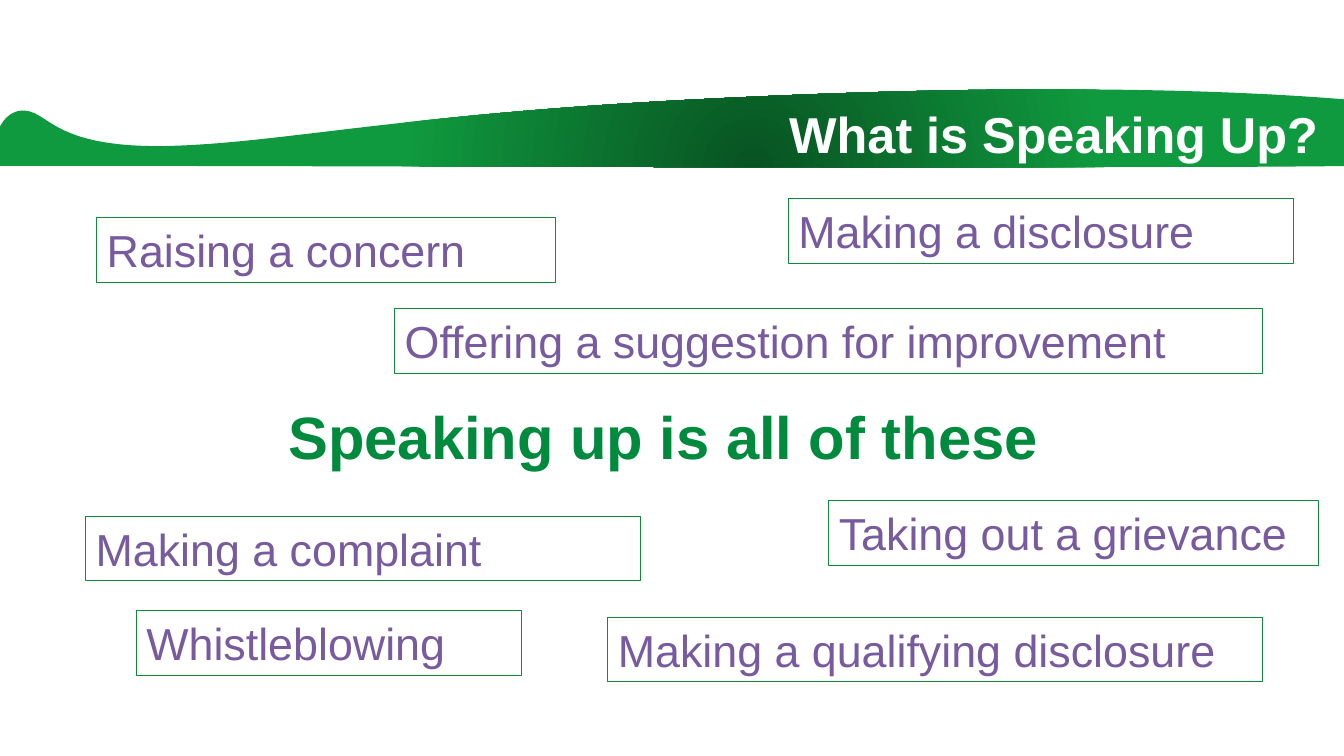
import pptx
import pptx.dml.color
import pptx.enum.shapes
import pptx.enum.text
import pptx.oxml
import pptx.util

Cm = pptx.util.Cm
Pt = pptx.util.Pt
RGBColor = pptx.dml.color.RGBColor

WHITE = RGBColor(0xFF, 0xFF, 0xFF)
GREEN = RGBColor(0x00, 0x8A, 0x3E)
BORDER_GREEN = RGBColor(0x0E, 0x8A, 0x38)
BAND_GREEN = RGBColor(0x10, 0x9A, 0x3F)
BAND_DARK = RGBColor(0x08, 0x53, 0x22)
PURPLE = RGBColor(0x78, 0x5B, 0x9E)

EXAMPLE_HEIGHT = 1.63
DRAWING = 'xmlns:a="http://schemas.openxmlformats.org/drawingml/2006/main"'

BAND_FRAME = (-0.25, 2.24, 38.48, 1.98)
BAND_START = (34.82, 2.59)
BAND_CURVES = [
    ((32.08, 2.31), (26.87, 2.06), (18.49, 2.46)),
    ((10.13, 2.84), (7.19, 3.61), (4.19, 3.68)),
    ((1.19, 3.73), (1.24, 2.72), (0.51, 2.79)),
    ((-0.25, 2.9), (-0.18, 4.22), (-0.25, 4.19)),
    ((-0.41, 4.14), (28.83, 4.29), (34.85, 4.17)),
    ((40.87, 4.04), (37.54, 2.87), BAND_START),
]

EXAMPLES = [
    ("Making a complaint", 2.16, 13.01, 13.98),
    ("Taking out a grievance", 20.89, 12.61, 12.34),
    ("Whistleblowing", 3.44, 15.39, 9.7),
    ("Offering a suggestion for improvement", 9.95, 7.78, 21.87),
    ("Raising a concern", 2.44, 5.48, 11.56),
    ("Making a qualifying disclosure", 15.32, 15.55, 16.51),
    ("Making a disclosure", 19.87, 5.0, 12.73),
]


def add_curved_shape(slide, frame, start, curves):
    """Add a closed outline of Bezier curves positioned in a frame."""
    builder = slide.shapes.build_freeform(Cm(start[0]), Cm(start[1]))
    builder.add_line_segments([(Cm(x), Cm(y)) for *_, (x, y) in curves], close=True)
    shape = builder.convert_to_shape()
    shape.left, shape.top, shape.width, shape.height = map(Cm, frame)

    def point_xml(x, y):
        return f'<a:pt x="{Cm(x) - shape.left}" y="{Cm(y) - shape.top}"/>'

    curve_xml = "".join(
        "<a:cubicBezTo>" + "".join(point_xml(*point) for point in curve) + "</a:cubicBezTo>"
        for curve in curves
    )
    outline = pptx.oxml.parse_xml(
        f'<a:path {DRAWING} w="{shape.width}" h="{shape.height}">'
        f"<a:moveTo>{point_xml(*start)}</a:moveTo>{curve_xml}<a:close/></a:path>"
    )
    outlines = shape._element.spPr.find(".//" + pptx.oxml.ns.qn("a:pathLst"))
    outlines.replace(outlines[0], outline)
    return shape


def fill_radial(shape, stops, left, top):
    """Fill a shape with a circular gradient centred at the given percentages."""
    stop_xml = "".join(
        f'<a:gs pos="{position * 1000}"><a:srgbClr val="{color}"/></a:gs>'
        for position, color in stops
    )
    gradient = pptx.oxml.parse_xml(
        f'<a:gradFill {DRAWING} rotWithShape="1"><a:gsLst>{stop_xml}</a:gsLst>'
        f'<a:path path="circle"><a:fillToRect l="{left * 1000}" t="{top * 1000}" '
        f'r="{(100 - left) * 1000}" b="{(100 - top) * 1000}"/></a:path></a:gradFill>'
    )
    shape.fill.background()
    properties = shape._element.spPr
    properties.replace(properties.find(pptx.oxml.ns.qn("a:noFill")), gradient)


def add_band(slide):
    """Draw the wavy green band behind the title."""
    band = add_curved_shape(slide, BAND_FRAME, BAND_START, BAND_CURVES)
    band.shadow.inherit = False
    band.line.fill.background()
    fill_radial(band, [(0, BAND_DARK), (46, BAND_GREEN), (100, BAND_GREEN)], 50, 130)


def write_text(shape, text, *, size, color, bold=False,
               align=pptx.enum.text.PP_ALIGN.LEFT, insets=(0.25, 0.13, 0.25, 0.13)):
    """Write one formatted line of text in a shape."""
    frame = shape.text_frame
    frame.word_wrap = True
    frame.vertical_anchor = pptx.enum.text.MSO_ANCHOR.MIDDLE
    frame.margin_left, frame.margin_top, frame.margin_right, frame.margin_bottom = map(Cm, insets)
    paragraph = frame.paragraphs[0]
    paragraph.alignment = align
    run = paragraph.add_run()
    run.text = text
    run.font.name = "Arial"
    run.font.size = Pt(size)
    run.font.bold = bold
    run.font.color.rgb = color


def add_heading(slide, text, left, top, width, height, **text_format):
    """Add a bold text box."""
    heading = slide.shapes.add_textbox(Cm(left), Cm(top), Cm(width), Cm(height))
    write_text(heading, text, bold=True, **text_format)


def add_example(slide, text, left, top, width):
    """Add an outlined box naming one way of speaking up."""
    example = slide.shapes.add_shape(
        pptx.enum.shapes.MSO_SHAPE.RECTANGLE,
        Cm(left), Cm(top), Cm(width), Cm(EXAMPLE_HEIGHT),
    )
    example.shadow.inherit = False
    example.fill.background()
    example.line.color.rgb = BORDER_GREEN
    example.line.width = Pt(0.75)
    write_text(example, text, size=32, color=PURPLE)


def main():
    """Build and save the slide."""
    presentation = pptx.Presentation()
    presentation.slide_width = Cm(33.87)
    presentation.slide_height = Cm(19.05)
    slide = presentation.slides.add_slide(presentation.slide_layouts[6])
    add_band(slide)
    add_heading(slide, "What is Speaking Up?", 18.9, 1.7, 23.88, 3.3,
                size=36, color=WHITE, insets=(0.99, 0.41, 0.99, 0.41))
    add_heading(slide, "Speaking up is all of these", 1.27, 3.76, 31.34, 13.61,
                size=42.7, color=GREEN, align=pptx.enum.text.PP_ALIGN.CENTER,
                insets=(0, 0.81, 0.42, 0))
    for example in EXAMPLES:
        add_example(slide, *example)
    presentation.save("out.pptx")


if __name__ == "__main__":
    main()
